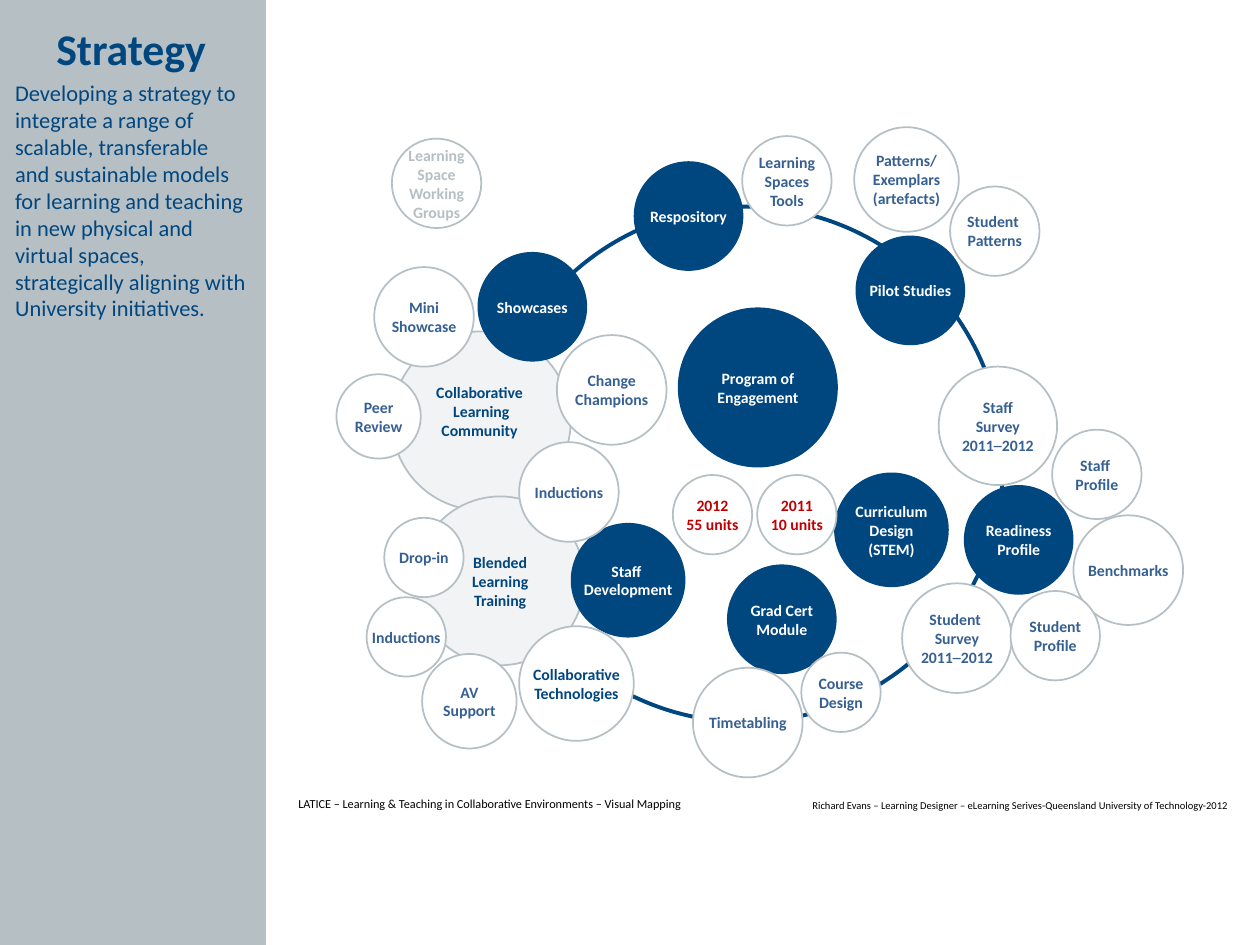
import pptx
import pptx.dml.color
import pptx.enum.shapes
import pptx.enum.text
import pptx.util

NAVY, BLUE, RED = "00467F", "376092", "C00000"
GREY, PALE, WHITE, BLACK = "B6BFC4", "F2F3F4", "FFFFFF", "000000"
ALIGN = pptx.enum.text.PP_ALIGN
ANCHOR = pptx.enum.text.MSO_ANCHOR
SHAPE = pptx.enum.shapes.MSO_SHAPE


def rgb(value):
    return pptx.dml.color.RGBColor.from_string(value)


class StrategySlide:
    """Style and current slide; the grid has 100 columns and 75 rows."""
    font = "Calibri"
    columns = 100
    label_size = 9

    # kind of circle: fill, outline, text colour
    kinds = {
        "core": (NAVY, None, WHITE),
        "hub": (PALE, GREY, NAVY),
        "node": (WHITE, GREY, BLUE),
        "open": (None, GREY, BLUE),
        "strong": (WHITE, GREY, NAVY),
        "units": (WHITE, GREY, RED),
        "faded": (WHITE, GREY, GREY),
    }

    def __init__(self, prs):
        self.cell = prs.slide_width / self.columns
        self.s = prs.slides.add_slide(prs.slide_layouts[6])

    def cells(self, *counts):
        return [round(n * self.cell) for n in counts]

    def shape(self, preset, box, fill=None, line=None, weight=1):
        sp = self.s.shapes.add_shape(preset, *self.cells(*box))
        sp.shadow.inherit = False
        if fill:
            sp.fill.solid()
            sp.fill.fore_color.rgb = rgb(fill)
        else:
            sp.fill.background()
        if line:
            sp.line.color.rgb = rgb(line)
            sp.line.width = pptx.util.Pt(weight)
        else:
            sp.line.fill.background()
        return sp

    def set_text(self, sp, text, size, color, bold=False, align=ALIGN.LEFT,
                 anchor=ANCHOR.TOP, insets=(0, 0, 0, 0), wrap=True):
        """Fill a frame; a new line starts a paragraph, a bar breaks a line."""
        tf = sp.text_frame
        tf.word_wrap = wrap
        tf.vertical_anchor = anchor
        (tf.margin_left, tf.margin_top,
         tf.margin_right, tf.margin_bottom) = self.cells(*insets)
        for i, paragraph in enumerate(text.split("\n")):
            p = tf.add_paragraph() if i else tf.paragraphs[0]
            p.alignment = align
            for j, line in enumerate(paragraph.split("|")):
                if j:
                    p.add_line_break()
                r = p.add_run()
                r.text = line
                r.font.name = self.font
                r.font.size = pptx.util.Pt(size)
                r.font.bold = bold
                r.font.color.rgb = rgb(color)

    def circle(self, kind, left, top, size, text, lift=0):
        fill, line, color = self.kinds[kind]
        sp = self.shape(SHAPE.OVAL, (left, top, size, size), fill, line)
        self.set_text(sp, text, self.label_size, color, True, ALIGN.CENTER,
                      ANCHOR.MIDDLE, (0, 0, 0, lift), wrap=False)

    def text(self, box, text, size, color, **style):
        sp = self.s.shapes.add_textbox(*self.cells(*box))
        self.set_text(sp, text, size, color, **style)


# Circles from back to front: kind, left, top, diameter, label
CIRCLES = [
    ("hub", 33, 39.4, 13.4, "Blended|Learning|Training"),
    ("node", 58.9, 10.8, 7.1, "Learning|Spaces|Tools"),
    ("node", 67.8, 10.1, 8.3, "Patterns/|Exemplars|(artefacts)"),
    ("core", 37.9, 20, 8.7, "Showcases"),
    ("core", 50.3, 12.8, 8.7, "Respository"),
    ("core", 67.9, 18.7, 8.7, "Pilot Studies"),
    ("core", 53.8, 24.4, 12.7, "Program of|Engagement"),
    ("core", 45.3, 41.5, 9.1, "Staff |Development"),
    ("core", 57.7, 44.8, 8.7, "Grad Cert|Module"),
    ("core", 66.2, 37.5, 9.1, "Curriculum|Design|(STEM)"),
    ("core", 76.5, 38.5, 8.7, "Readiness|Profile"),
    ("node", 75.4, 14.8, 7.1, "Student |Patterns"),
    ("node", 26.7, 29.7, 6.7, "Peer|Review"),
    ("node", 30.5, 41.1, 6.3, "Drop-in"),
    ("node", 29.1, 47.4, 6.3, "Inductions"),
    ("node", 63.6, 51.8, 6.3, "Course|Design"),
    ("node", 71.6, 46.3, 8.7, "Student |Survey|2011─2012"),
    ("units", 53.4, 37.7, 6.3, "2012|55 units"),
    ("units", 60.1, 37.7, 6.3, "2011|10 units"),
    ("node", 74.5, 29.1, 9.4, "Staff|Survey|2011─2012"),
    ("node", 29.7, 21.2, 7.9, "Mini|Showcase"),
    ("node", 41.2, 35.1, 7.9, "Inductions"),
    ("node", 33.5, 51.9, 7.5, "AV|Support"),
    ("node", 55, 53, 8.7, "Timetabling"),
    ("open", 85.2, 40.9, 8.7, "Benchmarks"),
    ("node", 83.5, 34.1, 7.1, "Staff |Profile"),
    ("node", 80.2, 46.9, 7.1, "Student|Profile"),
    ("faded", 31.1, 11, 7.1, "Learning|Space|Working\nGroups"),
    ("strong", 41.2, 49.7, 9.1, "Collaborative|Technologies"),
    ("node", 44.2, 26.6, 8.7, "Change|Champions"),
]


def main():
    prs = pptx.Presentation()
    prs.slide_width = pptx.util.Inches(10)
    prs.slide_height = pptx.util.Inches(7.5)
    slide = StrategySlide(prs)

    # Sidebar panel
    slide.shape(SHAPE.RECTANGLE, (0, 0, 21.1, 75), GREY)

    # Ring and circles of the map
    slide.shape(SHAPE.OVAL, (38.7, 16.4, 40.9, 40.9), None, NAVY, 2.25)
    slide.circle("hub", 31.1, 26.3, 14.2,
                 "Collaborative |Learning|Community ", lift=1.5)
    for circle in CIRCLES:
        slide.circle(*circle)

    # Captions under the map
    caption = (1, 0.5, 1, 0.5)
    slide.text((22.7, 62.7, 37.6, 2.2),
               "LATICE – Learning & Teaching in Collaborative Environments"
               " – Visual Mapping", 7, BLACK, insets=caption)
    slide.text((60.8, 62.9, 37.6, 2),
               "Richard Evans – Learning Designer – eLearning "
               "Serives-Queensland University of Technology-2012",
               6, BLACK, align=ALIGN.RIGHT, insets=caption)

    # Sidebar heading and text
    slide.text((0, 5.9, 20.8, 22.2),
               "Developing a strategy to integrate a range of scalable, "
               "transferable and sustainable models for learning and teaching "
               "in new physical and virtual spaces, strategically aligning "
               "with University initiatives.",
               12.8, NAVY, insets=(1.2, 0.4, 1.2, 0))
    slide.text((0, 1.7, 20.8, 4.2), "Strategy", 25, NAVY, bold=True,
               align=ALIGN.CENTER, anchor=ANCHOR.MIDDLE)

    prs.save("out.pptx")


if __name__ == "__main__":
    main()
